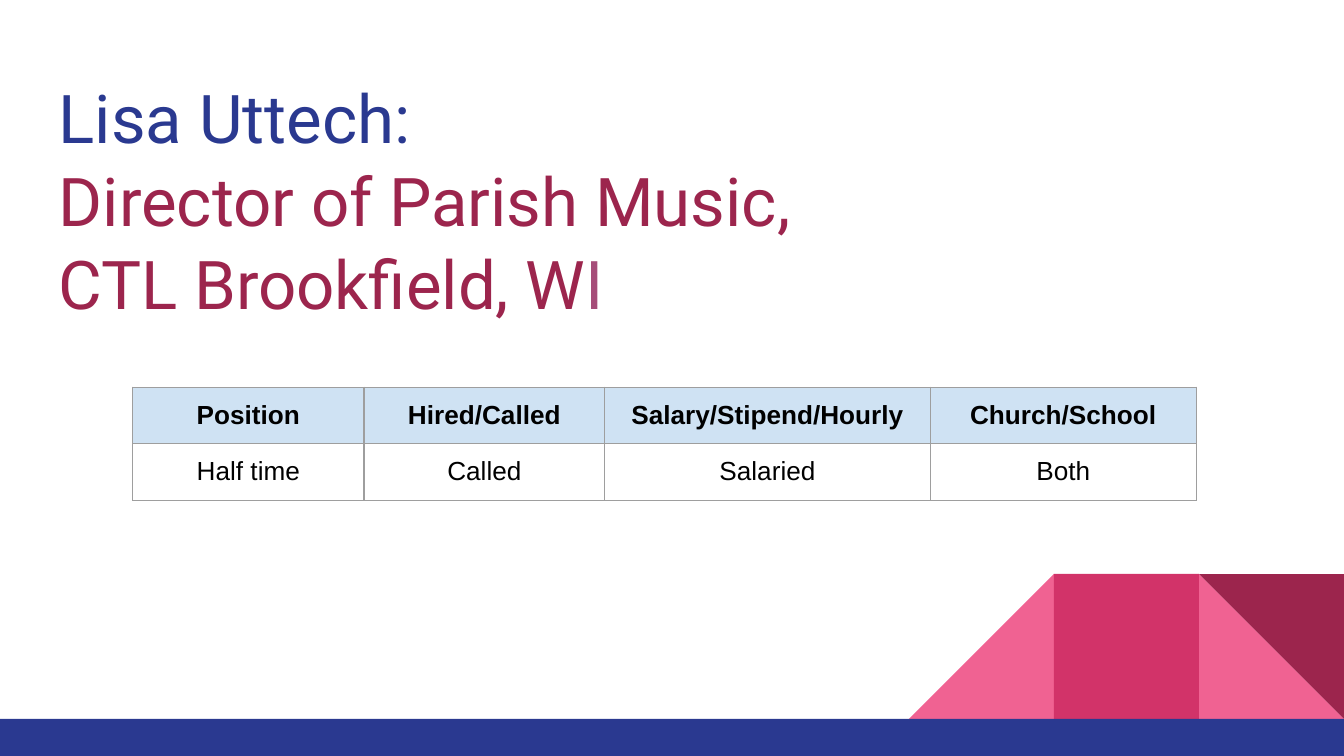
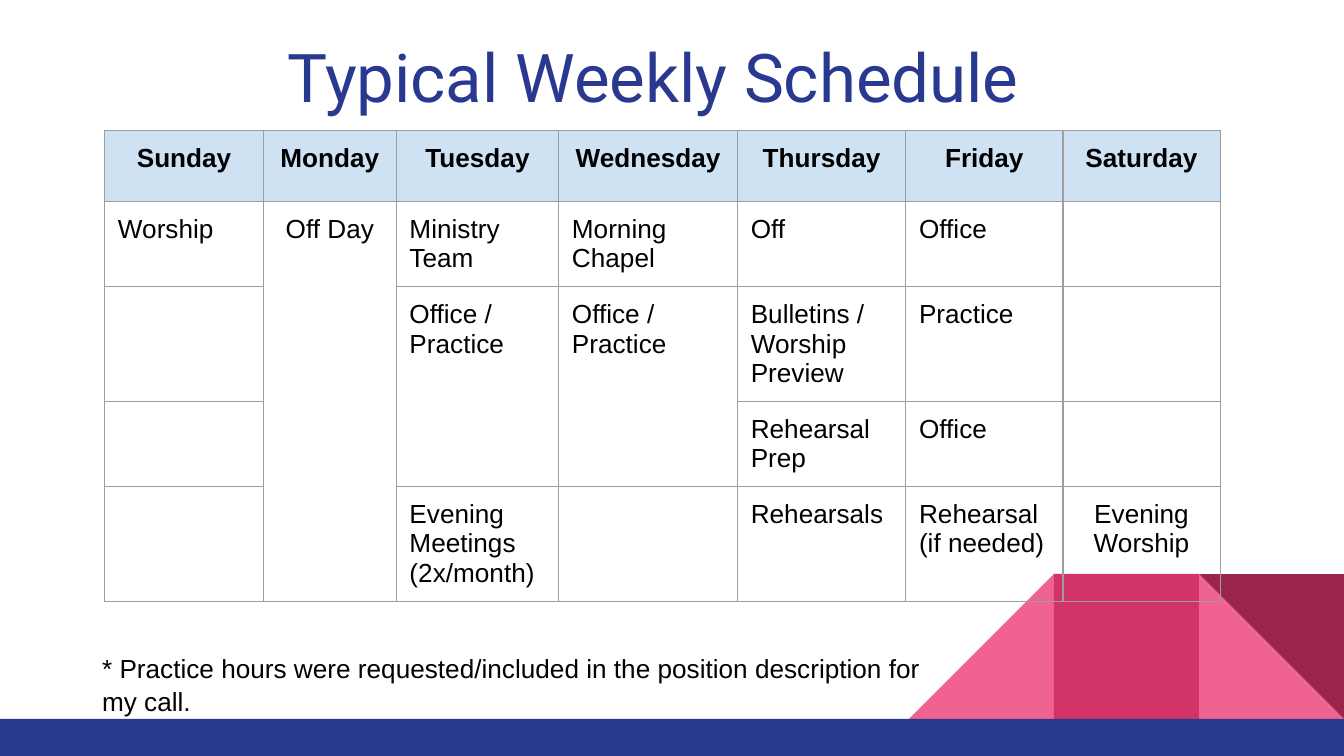
from dataclasses import dataclass

from lxml import etree
from pptx import Presentation, util as u
from pptx.dml.color import RGBColor
from pptx.enum import shapes, text
from pptx.oxml.ns import qn

NAVY, ROSE, PINK, WINE = "2A3990", "D23369", "F06292", "9C254D"
MAUVE, BLACK, HEADER_FILL, BORDER = "A64D79", "000000", "CFE2F3", "9E9E9E"
TITLE_FONT, BODY_FONT = "Roboto", "Arial"
SLIDE_WIDTH, SLIDE_HEIGHT = 25.4, 14.29
BAND_TOP, TILE = 13.59, 2.74
INSET = u.Cm(0.25)
CENTER, LEFT = text.PP_ALIGN.CENTER, text.PP_ALIGN.LEFT
TRIANGLE = shapes.MSO_SHAPE.RIGHT_TRIANGLE
RECTANGLE = shapes.MSO_SHAPE.RECTANGLE


@dataclass
class Tile:
    kind: int
    columns_from_right: int
    color: str
    rotation: int = 0
    mirrored: bool = False


@dataclass
class Grid:
    left: float
    top: float
    widths: list[float]
    heights: list[float]
    rows: list[list[str]]
    centered: set[str]
    merges: list[tuple[int, int, int]]


TILES = [
    Tile(TRIANGLE, 1, PINK),
    Tile(TRIANGLE, 3, PINK, mirrored=True),
    Tile(RECTANGLE, 2, ROSE),
    Tile(TRIANGLE, 1, WINE, rotation=180),
]

POSITION_GRID = Grid(
    2.51, 7.32, [4.37, 4.55, 6.15, 5.03], [1.07] * 2,
    [
        ["Position", "Hired/Called", "Salary/Stipend/Hourly", "Church/School"],
        ["Half time", "Called", "Salaried", "Both"],
    ],
    {"Half time", "Called", "Salaried", "Both"},
    [],
)

SCHEDULE_GRID = Grid(
    1.98, 2.46, [3, 2.51, 3.07, 3.38, 3.18, 2.97, 2.97],
    [1.35, 1.37, 1.22, 1.22, 1.22],
    [
        ["Sunday", "Monday", "Tuesday", "Wednesday", "Thursday", "Friday", "Saturday"],
        ["Worship", "Off Day", "Ministry Team", "Morning Chapel", "Off", "Office", ""],
        ["", "", "Office / Practice", "Office / Practice",
         "Bulletins / Worship Preview", "Practice", ""],
        ["", "", "", "", "Rehearsal Prep", "Office", ""],
        ["", "", "Evening Meetings (2x/month)", "", "Rehearsals",
         "Rehearsal\n(if needed)", "Evening Worship"],
    ],
    {"Off Day", "Evening Worship"},
    [(1, 4, 1), (2, 3, 2), (2, 3, 3)],
)


def rgb(color: str) -> RGBColor:
    return RGBColor.from_string(color)


def set_font(font, name: str, size: int, color: str, bold: bool = False) -> None:
    font.name, font.size, font.bold = name, u.Pt(size), bold
    font.color.rgb = rgb(color)


def set_frame(frame) -> None:
    frame.margin_left = frame.margin_right = INSET
    frame.margin_top = frame.margin_bottom = INSET
    frame.word_wrap = True
    frame.auto_size = text.MSO_AUTO_SIZE.NONE
    frame.vertical_anchor = text.MSO_ANCHOR.TOP


def place(shape, left: float, top: float, width: float, height: float) -> None:
    shape.left, shape.top = u.Cm(left), u.Cm(top)
    shape.width, shape.height = u.Cm(width), u.Cm(height)


def add_block(slide, kind: int, left: float, top: float, width: float,
              height: float, color: str):
    shape = slide.shapes.add_shape(
        kind, u.Cm(left), u.Cm(top), u.Cm(width), u.Cm(height))
    shape.shadow.inherit = False
    shape.fill.solid()
    shape.fill.fore_color.rgb = rgb(color)
    shape.line.fill.background()
    return shape


def add_decoration(slide) -> None:
    for tile in TILES:
        left = SLIDE_WIDTH - tile.columns_from_right * TILE
        shape = add_block(slide, tile.kind, left, BAND_TOP - TILE, TILE, TILE, tile.color)
        shape.rotation = tile.rotation
        if tile.mirrored:
            shape.element.spPr.find(qn("a:xfrm")).set("flipH", "1")
    add_block(slide, RECTANGLE, 0, BAND_TOP, SLIDE_WIDTH, SLIDE_HEIGHT - BAND_TOP, NAVY)


def add_slide(presentation, title: str, left: float, top: float,
              colors: list[str], alignment):
    slide = presentation.slides.add_slide(presentation.slide_layouts[5])
    add_decoration(slide)
    place(slide.shapes.title, left, top, 23.67, 1.68)
    frame = slide.shapes.title.text_frame
    frame.text = title
    set_frame(frame)
    for paragraph, color in zip(frame.paragraphs, colors):
        paragraph.alignment = alignment
        paragraph.line_spacing = 1.03
        set_font(paragraph.font, TITLE_FONT, 36, color)
    return slide


def set_borders(cell) -> None:
    properties = cell._tc.get_or_add_tcPr()
    for index, side in enumerate(("a:lnL", "a:lnR", "a:lnT", "a:lnB")):
        line = etree.Element(qn(side), w=str(u.Pt(0.75)))
        fill = etree.SubElement(line, qn("a:solidFill"))
        etree.SubElement(fill, qn("a:srgbClr"), val=BORDER)
        properties.insert(index, line)


def format_cell(cell, content: str, is_header: bool, centered: bool) -> None:
    cell.text = content
    cell.margin_left = cell.margin_right = INSET
    cell.margin_top = cell.margin_bottom = INSET
    if is_header:
        cell.fill.solid()
        cell.fill.fore_color.rgb = rgb(HEADER_FILL)
    else:
        cell.fill.background()
    for paragraph in cell.text_frame.paragraphs:
        paragraph.alignment = CENTER if centered else LEFT
        set_font(paragraph.font, BODY_FONT, 14, BLACK, is_header)
    set_borders(cell)


def add_grid(slide, grid: Grid) -> None:
    table = slide.shapes.add_table(
        len(grid.heights), len(grid.widths), u.Cm(grid.left), u.Cm(grid.top),
        u.Cm(sum(grid.widths)), u.Cm(sum(grid.heights))).table
    table.first_row = table.horz_banding = False
    for column, width in zip(table.columns, grid.widths):
        column.width = u.Cm(width)
    for row, height in zip(table.rows, grid.heights):
        row.height = u.Cm(height)
    for row_index, contents in enumerate(grid.rows):
        for column_index, content in enumerate(contents):
            is_header = row_index == 0
            format_cell(table.cell(row_index, column_index), content, is_header,
                        is_header or content in grid.centered)
    for first, last, column_index in grid.merges:
        table.cell(first, column_index).merge(table.cell(last, column_index))


def add_note(slide, content: str) -> None:
    box = slide.shapes.add_textbox(u.Cm(1.68), u.Cm(12.04), u.Cm(16.48), u.Cm(1.37))
    box.text_frame.text = content
    set_frame(box.text_frame)
    paragraph = box.text_frame.paragraphs[0]
    paragraph.line_spacing = 1.07
    set_font(paragraph.font, BODY_FONT, 14, BLACK)


def build_position_slide(presentation) -> None:
    slide = add_slide(
        presentation,
        "Lisa Uttech:\nDirector of Parish Music,\nCTL Brookfield, W",
        0.86, 1.14, [NAVY, WINE, WINE], LEFT)
    last_letter = slide.shapes.title.text_frame.paragraphs[-1].add_run()
    last_letter.text = "I"
    last_letter.font.color.rgb = rgb(MAUVE)
    add_grid(slide, POSITION_GRID)


def build_schedule_slide(presentation) -> None:
    slide = add_slide(presentation, "Typical Weekly Schedule", 0.51, 0.38, [NAVY], CENTER)
    add_grid(slide, SCHEDULE_GRID)
    add_note(slide, "* Practice hours were requested/included in the position "
                    "description for my call.")


def main() -> None:
    presentation = Presentation()
    presentation.slide_width = u.Cm(SLIDE_WIDTH)
    presentation.slide_height = u.Cm(SLIDE_HEIGHT)
    build_position_slide(presentation)
    build_schedule_slide(presentation)
    presentation.save("out.pptx")


if __name__ == "__main__":
    main()
